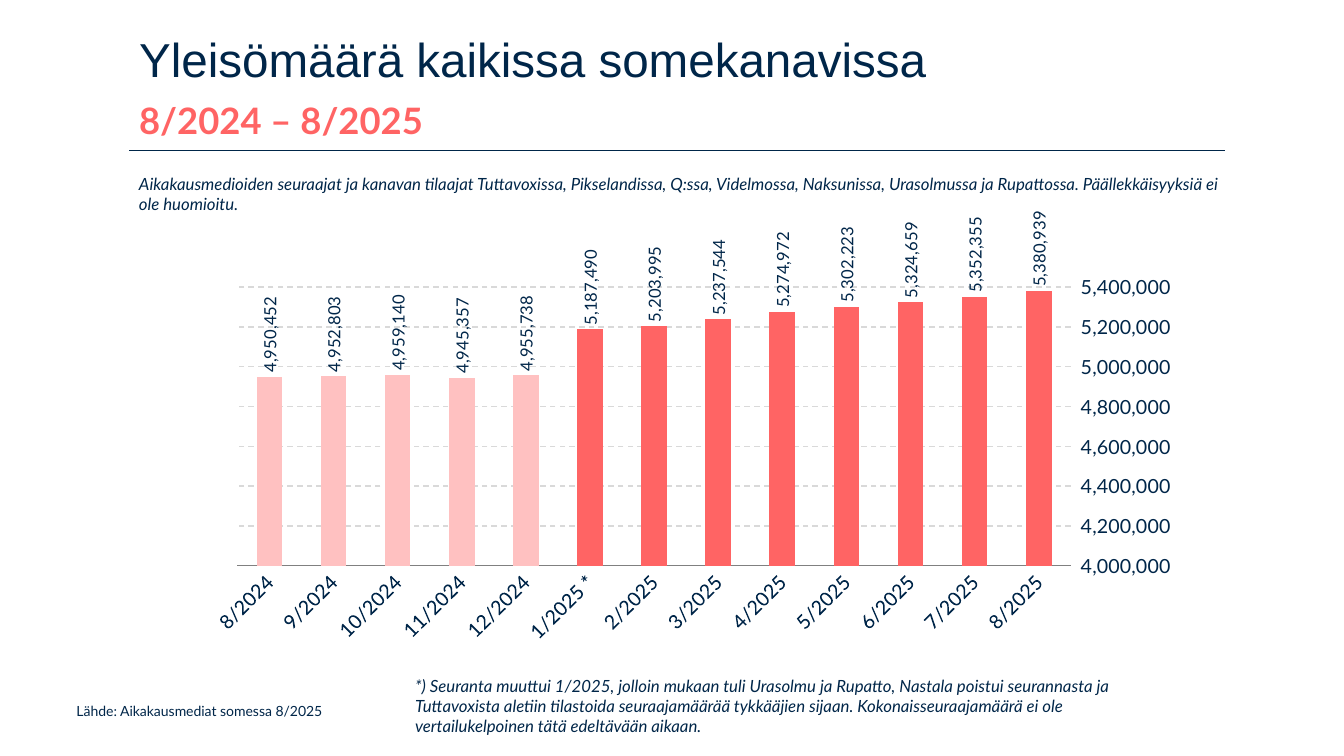
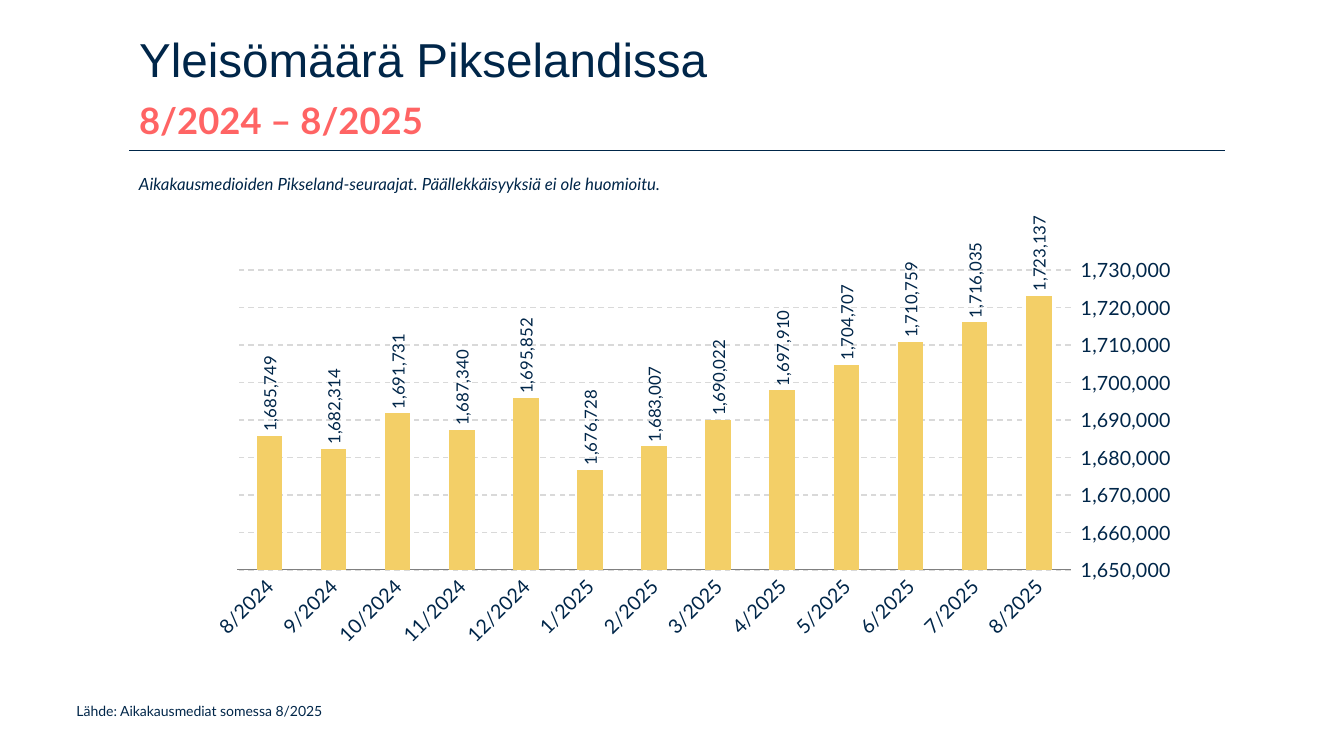
from lxml.etree import SubElement
from pptx import Presentation
from pptx.chart.data import CategoryChartData
from pptx.dml.color import RGBColor
from pptx.enum.chart import XL_CHART_TYPE, XL_LABEL_POSITION, XL_TICK_LABEL_POSITION, XL_TICK_MARK
from pptx.enum.dml import MSO_LINE
from pptx.enum.shapes import MSO_CONNECTOR
from pptx.enum.text import MSO_ANCHOR, MSO_AUTO_SIZE, PP_ALIGN
from pptx.oxml import parse_xml
from pptx.oxml.ns import nsdecls, qn
from pptx.util import Inches, Pt

COLORS = {
    "navy": "002649",
    "coral": "FF6464",
    "pale_coral": "FFC1C1",
    "yellow": "F3CF67",
    "grid": "D9D9D9",
    "axis": "808080",
}
BODY_FONT = "Lato"
TITLE_FONT = "Arial"
PERIOD = "8/2024 – 8/2025"
SOURCE = "Lähde: Aikakausmediat somessa 8/2025"
MONTHS = [f"{m}/2024" for m in range(8, 13)] + [f"{m}/2025" for m in range(1, 9)]
NUMBER_FORMAT = "#,##0"

TITLE_BOX = (9.6, 3.33, 83.55, 16.27)
RULE_BOX = (9.6, 19.87, 81.53, 0)
INTRO_BOX = (9.6, 22.27, 82.5, 6.6)
SOURCE_BOX = (4.95, 92.27, 49.35, 5.8)
FOOTNOTE_BOX = (30.15, 88.67, 53.25, 9.47)

SLIDES = [
    {
        "title": "Yleisömäärä kaikissa somekanavissa",
        "intro": "Aikakausmedioiden seuraajat ja kanavan tilaajat Tuttavoxissa, Pikselandissa, "
                 "Q:ssa, Videlmossa, Naksunissa, Urasolmussa ja Rupattossa. "
                 "Päällekkäisyyksiä ei ole huomioitu.",
        "footnote": "*) Seuranta muuttui 1/2025, jolloin mukaan tuli Urasolmu ja Rupatto, "
                    "Nastala poistui seurannasta ja Tuttavoxista aletiin tilastoida "
                    "seuraajamäärää tykkääjien sijaan. Kokonaisseuraajamäärä ei ole "
                    "vertailukelpoinen tätä edeltävään aikaan.",
        "box": (5.85, 28, 86.25, 61.47),
        "plot": (0.137, 0.112, 0.719, 0.648),
        "scale": (4000000, 5500000, 200000),
        "color": "coral",
        "pale_months": 5,
        "months": [m + " *" if m == "1/2025" else m for m in MONTHS],
        "values": [4950452, 4952803, 4959140, 4945357, 4955738, 5187490, 5203995,
                   5237544, 5274972, 5302223, 5324659, 5352355, 5380939],
    },
    {
        "title": "Yleisömäärä Pikselandissa",
        "intro": "Aikakausmedioiden Pikseland-seuraajat. Päällekkäisyyksiä ei ole huomioitu.",
        "footnote": None,
        "box": (5.85, 27.33, 86.25, 62.93),
        "plot": (0.137, 0.133, 0.719, 0.631),
        "scale": (1650000, 1730000, 10000),
        "color": "yellow",
        "pale_months": 0,
        "months": MONTHS,
        "values": [1685749, 1682314, 1691731, 1687340, 1695852, 1676728, 1683007,
                   1690022, 1697910, 1704707, 1710759, 1716035, 1723137],
    },
]

prs = Presentation()
prs.slide_width, prs.slide_height = Inches(13.33), Inches(7.5)


def place(box):
    x, y, w, h = box
    return (int(prs.slide_width * x / 100), int(prs.slide_height * y / 100),
            int(prs.slide_width * w / 100), int(prs.slide_height * h / 100))


def rgb(name):
    return RGBColor.from_string(COLORS[name])


def style(font, size, color="navy", name=BODY_FONT, bold=False, italic=False):
    font.size, font.name, font.bold, font.italic = Pt(size), name, bold, italic
    font.color.rgb = rgb(color)


def add_title(s, box, text):
    sp = s.shapes.title
    sp.left, sp.top, sp.width, sp.height = place(box)
    tf = sp.text_frame
    tf.text = f"{text}\v{PERIOD}"
    tf.word_wrap = True
    tf.auto_size = MSO_AUTO_SIZE.NONE
    tf.vertical_anchor = MSO_ANCHOR.MIDDLE
    p = tf.paragraphs[0]
    p.alignment = PP_ALIGN.LEFT
    p.line_spacing = Pt(39.4)
    heading, period = p.runs
    style(heading.font, 34, name=TITLE_FONT)
    style(period.font, 26, "coral", bold=True)


def add_rule(s, box):
    x, y, w, h = place(box)
    rule = s.shapes.add_connector(MSO_CONNECTOR.STRAIGHT, x, y, x + w, y + h)
    rule.line.color.rgb = rgb("navy")
    rule.line.width = Pt(1)
    SubElement(rule._element.spPr, qn("a:effectLst"))


def add_text(s, box, text, size=12, italic=True):
    tf = s.shapes.add_textbox(*place(box)).text_frame
    tf.text = text
    tf.word_wrap = True
    tf.auto_size = MSO_AUTO_SIZE.SHAPE_TO_FIT_TEXT
    style(tf.paragraphs[0].runs[0].font, size, italic=italic)


def rotate_text(part, degrees):
    body = part._element.find(qn("c:txPr")).find(qn("a:bodyPr"))
    body.set("rot", str(degrees * 60000))
    body.set("vert", "horz")


def set_plot_layout(chart, shares):
    area = chart._chartSpace.chart.plotArea
    for old in area.findall(qn("c:layout")):
        area.remove(old)
    parts = [("layoutTarget", "inner"), ("xMode", "edge"), ("yMode", "edge"),
             *zip("xywh", shares)]
    inner = "".join(f'<c:{tag} val="{val}"/>' for tag, val in parts)
    area.insert(0, parse_xml(
        f'<c:layout {nsdecls("c")}><c:manualLayout>{inner}</c:manualLayout></c:layout>'))


def format_axes(chart, scale):
    cat, val = chart.category_axis, chart.value_axis
    for axis in (cat, val):
        axis.major_tick_mark = axis.minor_tick_mark = XL_TICK_MARK.NONE
        style(axis.tick_labels.font, 14)
    cat.format.line.color.rgb = rgb("axis")
    cat.format.line.width = Pt(0.75)
    rotate_text(cat, -45)
    val.minimum_scale, val.maximum_scale, val.major_unit = scale
    val.tick_label_position = XL_TICK_LABEL_POSITION.HIGH
    val.tick_labels.number_format = NUMBER_FORMAT
    val.tick_labels.number_format_is_linked = False
    val.format.line.fill.background()
    grid = val.major_gridlines.format.line
    grid.color.rgb = rgb("grid")
    grid.width = Pt(1)
    grid.dash_style = MSO_LINE.DASH


def add_columns(s, box, content):
    data = CategoryChartData(number_format=NUMBER_FORMAT)
    data.categories = content["months"]
    data.add_series("Series 1", content["values"])
    chart = s.shapes.add_chart(XL_CHART_TYPE.COLUMN_CLUSTERED, *place(box), data).chart
    chart.has_title = chart.has_legend = False
    style(chart.font, 14)
    set_plot_layout(chart, content["plot"])
    format_axes(chart, content["scale"])

    plot = chart.plots[0]
    plot.gap_width = 150
    plot.vary_by_categories = False
    series = plot.series[0]
    series.format.fill.solid()
    series.format.fill.fore_color.rgb = rgb(content["color"])
    for i in range(content["pale_months"]):
        fill = series.points[i].format.fill
        fill.solid()
        fill.fore_color.rgb = rgb("pale_coral")

    plot.has_data_labels = True
    labels = plot.data_labels
    labels.show_value = True
    labels.position = XL_LABEL_POSITION.OUTSIDE_END
    labels.number_format = NUMBER_FORMAT
    labels.number_format_is_linked = False
    style(labels.font, 12)
    rotate_text(labels, -90)


def add_audience_slide(content):
    s = prs.slides.add_slide(prs.slide_layouts[5])
    add_rule(s, RULE_BOX)
    add_text(s, SOURCE_BOX, SOURCE, size=10, italic=False)
    add_columns(s, content["box"], content)
    add_title(s, TITLE_BOX, content["title"])
    add_text(s, INTRO_BOX, content["intro"])
    if content["footnote"]:
        add_text(s, FOOTNOTE_BOX, content["footnote"])


def main():
    for content in SLIDES:
        add_audience_slide(content)
    prs.save("out.pptx")


if __name__ == "__main__":
    main()
